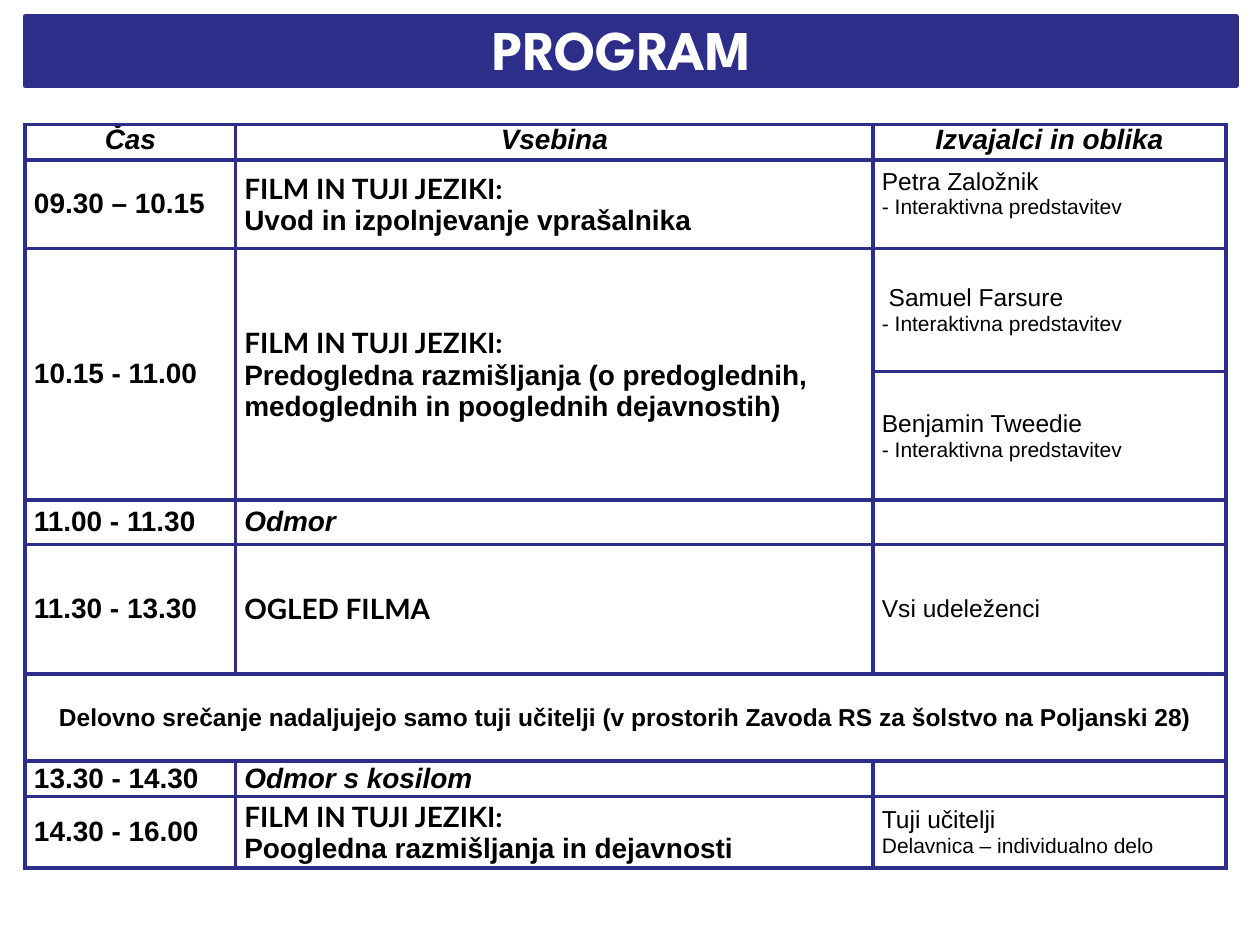
"""Build the programme slide with its schedule table."""
from dataclasses import dataclass

from lxml import etree
from pptx import Presentation
from pptx.dml.color import RGBColor
from pptx.enum.text import MSO_ANCHOR, PP_ALIGN
from pptx.oxml.ns import qn
from pptx.util import Inches, Pt

CENTER, LEFT = PP_ALIGN.CENTER, PP_ALIGN.LEFT
TOP, MIDDLE = MSO_ANCHOR.TOP, MSO_ANCHOR.MIDDLE
NAVY = RGBColor(0x2D, 0x2D, 0x8A)
WHITE = RGBColor(0xFF, 0xFF, 0xFF)
BLACK = RGBColor(0, 0, 0)
COLUMN_WIDTHS = (1.67, 5.06, 2.8)
ROW_HEIGHTS = (0.28, 0.7, 0.98, 1.02, 0.35, 1.03, 0.69, 0.28, 0.57)


@dataclass(frozen=True)
class Line:
    text: str
    size: int = 16
    font: str = "Arial"
    bold: bool = True
    italic: bool = False


@dataclass(frozen=True)
class Entry:
    row: int
    column: int
    lines: tuple[Line, ...]
    align: PP_ALIGN = LEFT
    anchor: MSO_ANCHOR = MIDDLE
    bottom: float = 0


def session(heading: str, *topics: str) -> tuple[Line, ...]:
    return (Line(heading, font="Lato"), *(Line(topic) for topic in topics))


def presenter(name: str, *formats: str) -> tuple[Line, ...]:
    return (Line(name, 14, bold=False), *(Line(form, 12, bold=False) for form in formats))


SERIES = "FILM IN TUJI JEZIKI:"
INTERACTIVE = "- Interaktivna predstavitev"
HEADINGS = ("Čas", "Vsebina", "Izvajalci in oblika")
TIMES = {
    1: "09.30 – 10.15",
    2: "10.15 - 11.00",
    4: "11.00 - 11.30",
    5: "11.30 - 13.30",
    7: "13.30 - 14.30",
    8: "14.30 - 16.00",
}
CONTENTS = {
    1: session(SERIES, "Uvod in izpolnjevanje vprašalnika"),
    2: session(SERIES, "Predogledna razmišljanja (o predoglednih, "
                       "medoglednih in pooglednih dejavnostih)"),
    4: (Line("Odmor", italic=True),),
    5: session("OGLED FILMA"),
    7: (Line("Odmor s kosilom", italic=True),),
    8: session(SERIES, "Poogledna razmišljanja in dejavnosti"),
}
PRESENTERS = {
    2: presenter(" Samuel Farsure", INTERACTIVE),
    3: presenter("Benjamin Tweedie", INTERACTIVE),
    5: presenter("Vsi udeleženci"),
    8: presenter("Tuji učitelji", "Delavnica – individualno delo"),
}
NOTICE = Line("Delovno srečanje nadaljujejo samo tuji učitelji "
              "(v prostorih Zavoda RS za šolstvo na Poljanski 28)", 14)
ENTRIES = (
    *(Entry(0, column, (Line(heading, italic=True),), CENTER, TOP)
      for column, heading in enumerate(HEADINGS)),
    *(Entry(row, 0, (Line(time),)) for row, time in TIMES.items()),
    *(Entry(row, 1, lines) for row, lines in CONTENTS.items()),
    Entry(1, 2, presenter("Petra Založnik", INTERACTIVE), bottom=0.17),
    *(Entry(row, 2, lines) for row, lines in PRESENTERS.items()),
    Entry(6, 0, (NOTICE,), CENTER),
)


def add_run(paragraph, line: Line, color: RGBColor) -> None:
    run = paragraph.add_run()
    run.text = line.text
    font = run.font
    font.name, font.size = line.font, Pt(line.size)
    font.bold, font.italic = line.bold, line.italic
    font.color.rgb = color


def format_cell(cell) -> None:
    cell.fill.solid()
    cell.fill.fore_color.rgb = WHITE
    cell.margin_left = cell.margin_right = Inches(0.07)
    cell.margin_top = cell.margin_bottom = 0
    properties = cell._tc.get_or_add_tcPr()
    for position, side in enumerate(("lnL", "lnR", "lnT", "lnB")):
        border = etree.Element(qn(f"a:{side}"), w=str(Pt(2.25)))
        fill = etree.SubElement(border, qn("a:solidFill"))
        etree.SubElement(fill, qn("a:srgbClr"), val=str(NAVY))
        properties.insert(position, border)


def fill_cell(cell, entry: Entry) -> None:
    cell.vertical_anchor = entry.anchor
    cell.margin_bottom = Inches(entry.bottom)
    frame = cell.text_frame
    for index, line in enumerate(entry.lines):
        paragraph = frame.add_paragraph() if index else frame.paragraphs[0]
        paragraph.alignment = entry.align
        add_run(paragraph, line, BLACK)


def add_title(slide) -> None:
    title = slide.shapes.title
    title.left, title.top = Inches(0.2), Inches(0.13)
    title.width, title.height = Inches(9.61), Inches(0.55)
    title.fill.solid()
    title.fill.fore_color.rgb = NAVY
    title.line.color.rgb = NAVY
    title.line.width = Pt(3)
    frame = title.text_frame
    frame.vertical_anchor = MIDDLE
    frame.margin_top = frame.margin_bottom = 0
    frame.margin_right = Inches(0.24)
    paragraph = frame.paragraphs[0]
    paragraph.alignment = CENTER
    paragraph.line_spacing = Pt(35)
    add_run(paragraph, Line("PROGRAM", 32, "League Spartan"), WHITE)


def add_schedule(slide) -> None:
    schedule = slide.shapes.add_table(
        len(ROW_HEIGHTS), len(COLUMN_WIDTHS), Inches(0.2), Inches(0.99),
        Inches(sum(COLUMN_WIDTHS)), Inches(sum(ROW_HEIGHTS))).table
    schedule.first_row = schedule.horz_banding = False
    for column, width in zip(schedule.columns, COLUMN_WIDTHS):
        column.width = Inches(width)
    for row, height in zip(schedule.rows, ROW_HEIGHTS):
        row.height = Inches(height)
    for cell in schedule.iter_cells():
        format_cell(cell)
    for entry in ENTRIES:
        fill_cell(schedule.cell(entry.row, entry.column), entry)
    for cell in schedule.iter_cells():
        if not cell.text:
            etree.SubElement(cell.text_frame.paragraphs[0]._p, qn("a:endParaRPr"), sz="1200")
    for column in (0, 1):
        schedule.cell(2, column).merge(schedule.cell(3, column))
    schedule.cell(6, 0).merge(schedule.cell(6, 2))


def main() -> None:
    deck = Presentation()
    deck.slide_width, deck.slide_height = Inches(10), Inches(7.5)
    slide = deck.slides.add_slide(deck.slide_layouts[5])
    add_title(slide)
    add_schedule(slide)
    deck.save("out.pptx")


if __name__ == "__main__":
    main()
